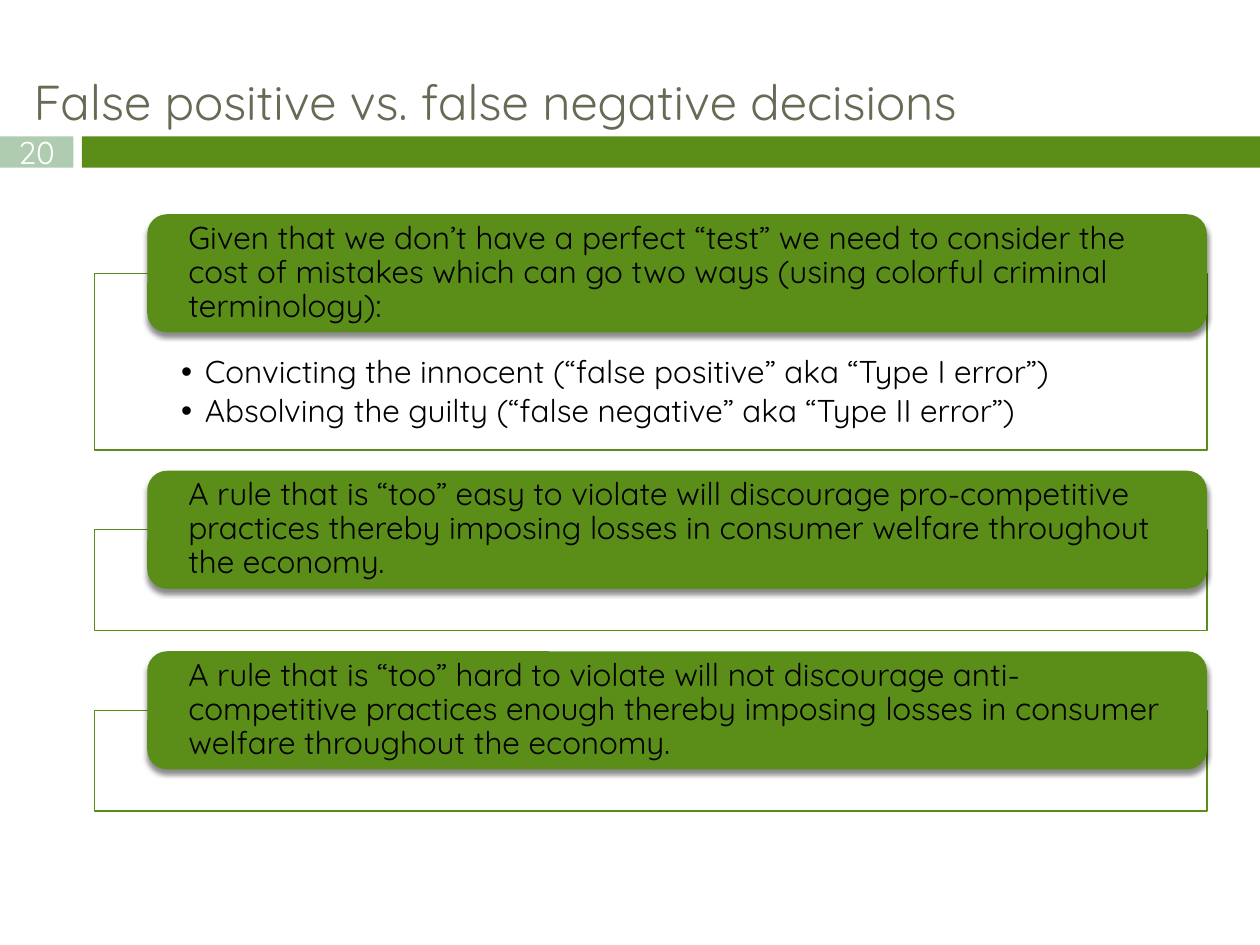
from dataclasses import dataclass

from lxml import etree
from pptx import Presentation
from pptx.dml.color import RGBColor
from pptx.enum.shapes import MSO_SHAPE
from pptx.enum.text import MSO_ANCHOR, MSO_AUTO_SIZE, PP_ALIGN
from pptx.oxml.ns import qn
from pptx.util import Cm, Pt

RECT, ROUNDED = MSO_SHAPE.RECTANGLE, MSO_SHAPE.ROUNDED_RECTANGLE
TOP, MIDDLE = MSO_ANCHOR.TOP, MSO_ANCHOR.MIDDLE
LEFT, CENTER = PP_ALIGN.LEFT, PP_ALIGN.CENTER
NO_AUTOFIT = MSO_AUTO_SIZE.NONE


@dataclass(frozen=True)
class Theme:
    font: str = "Quicksand"
    title_size: int = 28
    text_size: int = 18
    title: str = "676A55"
    accent: str = "5A8E19"
    number_fill: str = "B0CCB0"
    white: str = "FFFFFF"
    black: str = "000000"


class SlideBuilder:
    def __init__(self, slide, theme):
        self.slide = slide
        self.theme = theme

    def place(self, shape, box):
        shape.left, shape.top, shape.width, shape.height = map(Cm, box)

    def add_bullet(self, paragraph):
        properties = paragraph._p.get_or_add_pPr()
        properties.set("marL", str(Cm(0.48)))
        properties.set("indent", str(-Cm(0.48)))
        etree.SubElement(properties, qn("a:buChar"), char="•")

    def set_text(self, shape, lines, size, color, margins, anchor,
                 align=LEFT, bulleted=False):
        """Fill the text frame; margins are left, top, right, bottom in cm."""
        frame = shape.text_frame
        frame.text = "\n".join(lines)
        frame.word_wrap = True
        frame.auto_size = NO_AUTOFIT
        frame.vertical_anchor = anchor
        (frame.margin_left, frame.margin_top,
         frame.margin_right, frame.margin_bottom) = map(Cm, margins)
        for paragraph in frame.paragraphs:
            if bulleted:
                self.add_bullet(paragraph)
            paragraph.alignment = align
            paragraph.font.name = self.theme.font
            paragraph.font.size = Pt(size)
            paragraph.font.color.rgb = RGBColor.from_string(color)
        return frame.paragraphs

    def title(self, text, box):
        title = self.slide.shapes.title
        self.place(title, box)
        self.set_text(title, [text], self.theme.title_size, self.theme.title,
                      (0.25, 0.13, 0.25, 0.13), TOP)

    def bar(self, box, fill, kind=RECT):
        bar = self.slide.shapes.add_shape(kind, *map(Cm, box))
        bar.shadow.inherit = False
        bar.fill.solid()
        bar.fill.fore_color.rgb = RGBColor.from_string(fill)
        bar.line.fill.background()
        return bar

    def page_number(self, number, box):
        badge = self.bar(box, self.theme.number_fill)
        self.set_text(badge, [number], self.theme.text_size, self.theme.white,
                      (0, 0, 0, 0), MIDDLE, CENTER)

    def outline(self, panel):
        """Give a panel its nearly opaque white fill and thin accent line."""
        panel.fill.solid()
        panel.fill.fore_color.rgb = RGBColor.from_string(self.theme.white)
        color = panel._element.spPr.find(qn("a:solidFill"))[0]
        etree.SubElement(color, qn("a:alpha"), val="90000")
        panel.line.color.rgb = RGBColor.from_string(self.theme.accent)
        panel.line.width = Pt(0.79)

    def empty_panel(self, box):
        self.outline(self.bar(box, self.theme.white))

    def list_panel(self, items, box):
        panel = self.slide.placeholders[1]
        self.place(panel, box)
        self.outline(panel)
        for paragraph in self.set_text(panel, items, self.theme.text_size,
                                       self.theme.black, (1.75, 1.68, 1.75, 0.36),
                                       TOP, bulleted=True):
            paragraph.line_spacing = 0.9
            paragraph.space_before = Pt(0)
            paragraph.space_after = Pt(2.7)

    def heading(self, text, box):
        heading = self.bar(box, self.theme.accent, ROUNDED)
        effects = heading._element.spPr.find(qn("a:effectLst"))
        shadow = etree.SubElement(
            effects, qn("a:outerShdw"), blurRad=str(Pt(3)), dist=str(Pt(2.4)),
            dir="5400000", algn="ctr", rotWithShape="0")
        color = etree.SubElement(shadow, qn("a:srgbClr"), val=self.theme.black)
        etree.SubElement(color, qn("a:alpha"), val="45000")
        for paragraph in self.set_text(heading, [text], self.theme.text_size,
                                       self.theme.black, (0.71, 0, 0.71, 0), MIDDLE):
            paragraph.line_spacing = 0.9


SECTIONS = [
    ("Given that we don’t have a perfect “test” we need to consider the cost of "
     "mistakes which can go two ways (using colorful criminal terminology):",
     ["Convicting the innocent (“false positive” aka “Type I error”)",
      "Absolving the guilty (“false negative” aka “Type II error”)"]),
    ("A rule that is “too” easy to violate will discourage pro-competitive practices "
     "thereby imposing losses in consumer welfare throughout the economy.", []),
    ("A rule that is “too” hard to violate will not discourage anti-competitive "
     "practices enough thereby imposing losses in consumer welfare throughout "
     "the economy.", []),
]


def main():
    deck = Presentation()
    deck.slide_width, deck.slide_height = Cm(25.4), Cm(19.05)
    theme = Theme()
    builder = SlideBuilder(deck.slides.add_slide(deck.slide_layouts[1]), theme)

    builder.page_number("20", (0, 2.75, 1.48, 0.63))
    builder.bar((1.65, 2.75, 23.75, 0.63), theme.accent)
    builder.title("False positive vs. false negative decisions",
                  (0.43, 1.32, 25.4, 1.22))

    heading_height, gap = 2.38, 0.42
    top = 4.32
    for text, items in SECTIONS:
        panel_top = top + heading_height / 2
        panel_height = 3.56 if items else 2.03
        panel_box = (1.9, panel_top, 22.43, panel_height)
        if items:
            builder.list_panel(items, panel_box)
        else:
            builder.empty_panel(panel_box)
        builder.heading(text, (2.97, top, 21.36, heading_height))
        top = panel_top + panel_height + gap

    deck.save("out.pptx")


if __name__ == "__main__":
    main()
